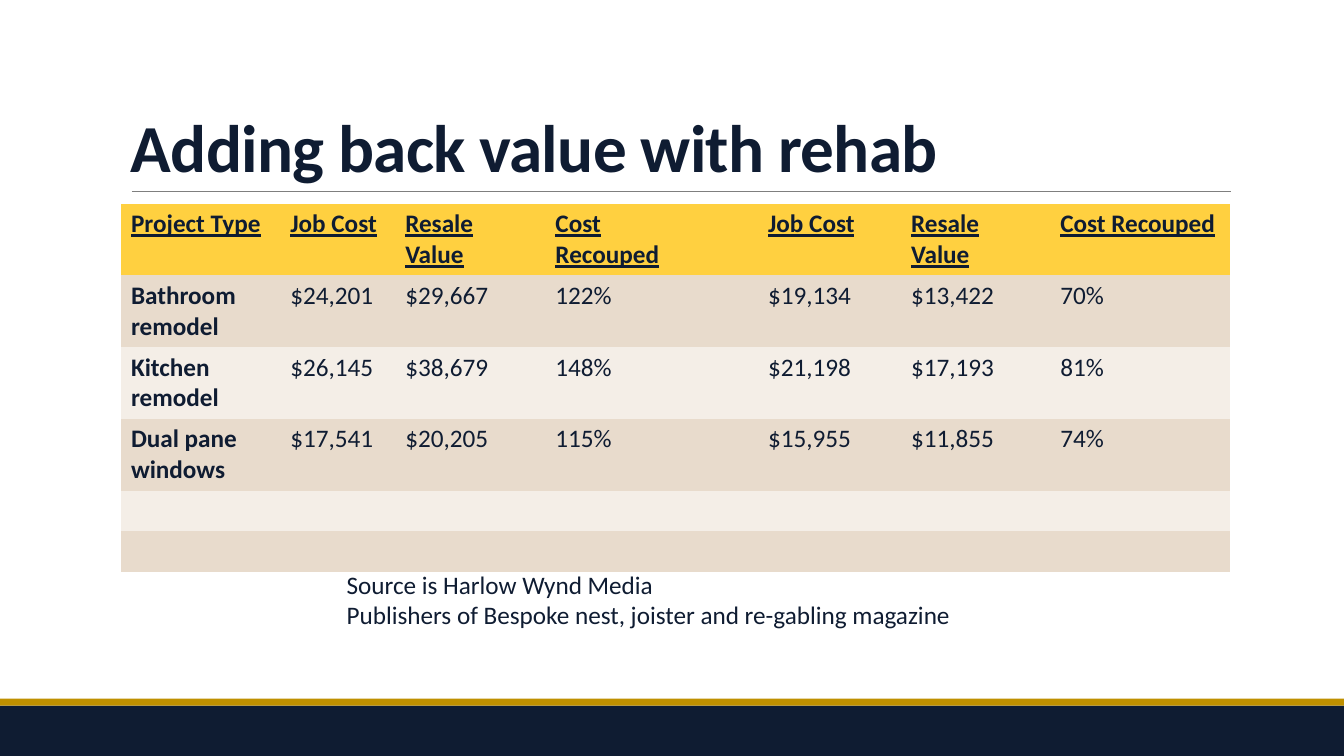
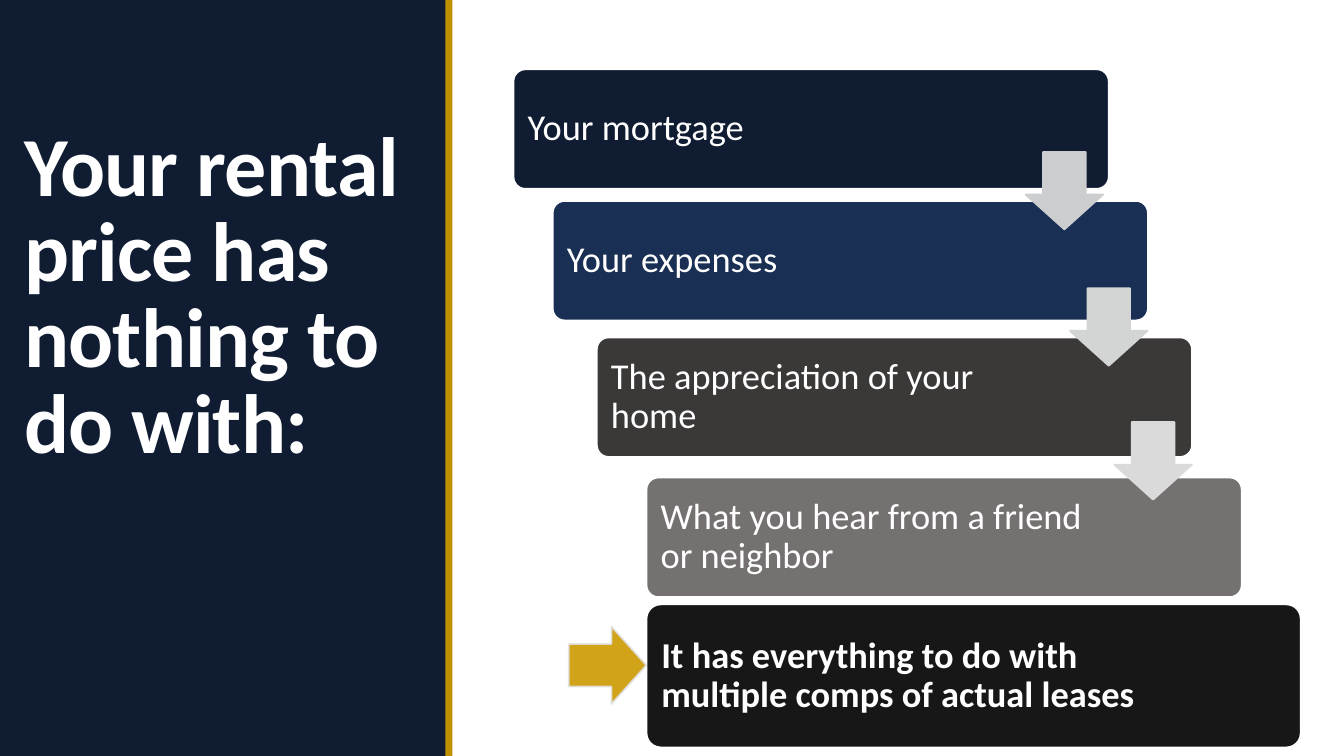
"""Build two slides on rehab value and rental pricing."""
from dataclasses import dataclass

from lxml import etree
from pptx import Presentation
from pptx.dml.color import RGBColor
from pptx.enum import shapes, text
from pptx.oxml.ns import qn
from pptx.util import Pt


@dataclass(frozen=True)
class Theme:
    """Colours, type sizes and measures that the slides share."""

    font: str = "Calibri"
    navy: str = "0F1C32"
    gold: str = "BF9000"
    white: str = "FFFFFF"
    rule: str = "7F7F7F"
    header: str = "FFD040"
    bands: tuple = ("E8DBCC", "F4EEE7")
    arrow: str = "CC9900"
    arrow_edge: str = "E1E1E1"
    title: int = 48
    side_title: int = 60
    body: int = 18
    step: int = 26
    width: int = 960
    height: int = 540
    strip: int = 5


T = Theme()

HEADERS = ["Project Type", "Job Cost", "Resale Value", "Cost Recouped", "",
           "Job Cost", "Resale Value", "Cost Recouped"]
PROJECTS = [
    ["Bathroom remodel", "$24,201", "$29,667", "122%", "", "$19,134", "$13,422", "70%"],
    ["Kitchen remodel", "$26,145", "$38,679", "148%", "", "$21,198", "$17,193", "81%"],
    ["Dual pane windows", "$17,541", "$20,205", "115%", "", "$15,955", "$11,855", "74%"],
    [""] * 8,
    [""] * 8,
]
COLUMNS = [113.8, 82.1, 107.3, 119.5, 32.4, 102.2, 106.5, 128.2]
SOURCE = ["Source is Harlow Wynd Media",
          "Publishers of Bespoke nest, joister and re-gabling magazine"]

STEP_SIZE = (425.2, 85.4)
STEPS = [
    ("Your mortgage", (0, 0), "0F1C32"),
    ("Your expenses", (28, 94), "192F54"),
    ("The appreciation of your home", (59.5, 191.5), "3B3838"),
    ("What you hear from a friend or neighbor", (95, 291.6), "767171"),
]
CONCLUSION = ("It has everything to do with multiple comps of actual leases",
              (95, 382.2, 467.3, 102.2), "181717")
ARROW_SIZE = 55.4
ARROWS = [((365.8, 59), "CCCDCE"), ((397.5, 156.4), "D3D4D4"), ((429.2, 252), "DADADA")]
POINTER = (39.5, 398)


def rgb(value):
    """Turn a hex string into a colour."""
    return RGBColor.from_string(value)


def add_run(p, words, size, color, bold=False, underline=False, spacing=None):
    """Add one formatted run to a paragraph."""
    r = p.add_run()
    r.text = words
    f = r.font
    f.name, f.size, f.bold, f.underline = T.font, Pt(size), bold, underline
    f.color.rgb = rgb(color)
    if spacing is not None:
        r._r.get_or_add_rPr().set("spc", str(round(spacing * 100)))


def add_box(s, kind, box, fill, line=None, alpha=None):
    """Draw a preset shape with a plain fill and an optional outline."""
    sp = s.shapes.add_shape(kind, *map(Pt, box))
    sp.shadow.inherit = False
    sp.fill.solid()
    sp.fill.fore_color.rgb = rgb(fill)
    if line:
        sp.line.color.rgb = rgb(line)
        sp.line.width = Pt(1.25)
    else:
        sp.line.fill.background()
    if alpha:
        for color in sp._element.spPr.iter(qn("a:srgbClr")):
            etree.SubElement(color, qn("a:alpha")).set("val", str(alpha * 1000))
    return sp


def add_band(s, panel, strip):
    """Draw a navy panel edged with a gold strip."""
    for box, color in ((panel, T.navy), (strip, T.gold)):
        add_box(s, shapes.MSO_SHAPE.RECTANGLE, box, color)


def add_textbox(s, box, anchor):
    """Add a wrapping text box and return its text frame."""
    tf = s.shapes.add_textbox(*map(Pt, box)).text_frame
    tf.word_wrap = True
    tf.vertical_anchor = anchor
    return tf


def add_title(s, box, words, size, color, anchor):
    """Place a bold, tightly set title."""
    p = add_textbox(s, box, anchor).paragraphs[0]
    p.line_spacing = 0.85
    add_run(p, words, size, color, bold=True, spacing=-0.5)


def add_rule(s, x, y, width):
    """Draw the thin rule under a title."""
    c = s.shapes.add_connector(shapes.MSO_CONNECTOR.STRAIGHT,
                               Pt(x), Pt(y), Pt(x + width), Pt(y))
    c.line.color.rgb = rgb(T.rule)
    c.line.width = Pt(0.5)
    etree.SubElement(c._element.spPr, qn("a:effectLst"))


def add_project_table(s, x, y):
    """Place the table of project costs and values."""
    rows = [HEADERS] + PROJECTS
    heights = [51.2 if any(row) else 29.2 for row in rows]
    frame = s.shapes.add_table(len(rows), len(COLUMNS), Pt(x), Pt(y),
                               Pt(sum(COLUMNS)), Pt(sum(heights)))
    tbl = frame.table
    tbl.first_row = tbl.horz_banding = False
    style = tbl._tbl.tblPr.find(qn("a:tableStyleId"))
    style.text = "{2D5ABB26-0587-4C30-8999-92F81FD0307C}"
    for column, width in zip(tbl.columns, COLUMNS):
        column.width = Pt(width)
    for i, row in enumerate(rows):
        tbl.rows[i].height = Pt(heights[i])
        for j, words in enumerate(row):
            cell = tbl.cell(i, j)
            cell.fill.solid()
            cell.fill.fore_color.rgb = rgb(T.bands[(i - 1) % 2] if i else T.header)
            if words:
                add_run(cell.text_frame.paragraphs[0], words, T.body, T.navy,
                        bold=i == 0 or j == 0, underline=i == 0)


def add_source(s, box):
    """Place the two source lines."""
    tf = add_textbox(s, box, text.MSO_ANCHOR.TOP)
    for i, words in enumerate(SOURCE):
        p = tf.add_paragraph() if i else tf.paragraphs[0]
        add_run(p, words, T.body, T.navy)


def add_step(s, box, words, fill, bold=False):
    """Draw one rounded step with its text."""
    sp = add_box(s, shapes.MSO_SHAPE.ROUNDED_RECTANGLE, box, fill, T.white)
    sp.adjustments[0] = 0.1
    tf = sp.text_frame
    tf.word_wrap = True
    tf.vertical_anchor = text.MSO_ANCHOR.MIDDLE
    tf.margin_left = tf.margin_top = tf.margin_bottom = Pt(7.6)
    tf.margin_right = Pt(box[2] * 0.223)
    p = tf.paragraphs[0]
    p.alignment = text.PP_ALIGN.LEFT
    p.line_spacing = 0.9
    add_run(p, words, T.step, T.white, bold=bold)


def add_arrow(s, kind, x, y, fill, line, alpha=None):
    """Draw one block arrow."""
    sp = add_box(s, kind, (x, y, ARROW_SIZE, ARROW_SIZE), fill, line, alpha)
    sp.adjustments[0], sp.adjustments[1] = 0.55, 0.45


def add_staircase(s, x, y):
    """Draw the descending steps, the conclusion and their arrows."""
    for words, (dx, dy), fill in STEPS:
        add_step(s, (x + dx, y + dy, *STEP_SIZE), words, fill)
    words, (dx, dy, width, height), fill = CONCLUSION
    add_step(s, (x + dx, y + dy, width, height), words, fill, bold=True)
    for (dx, dy), color in ARROWS:
        add_arrow(s, shapes.MSO_SHAPE.DOWN_ARROW, x + dx, y + dy, color, color)
    dx, dy = POINTER
    add_arrow(s, shapes.MSO_SHAPE.RIGHT_ARROW, x + dx, y + dy,
              T.arrow, T.arrow_edge, alpha=90)


def build_table_slide(s):
    """Build the slide with the project table."""
    add_band(s, (0, 504, T.width, 36), (0, 499, T.width, T.strip))
    add_rule(s, 94.3, 136.7, 784.8)
    add_title(s, (86.4, 22.3, 792, 114.5), "Adding back value with rehab",
              T.title, T.navy, text.MSO_ANCHOR.BOTTOM)
    add_project_table(s, 86.4, 145.6)
    add_source(s, (240.5, 403, 479, 51))


def build_steps_slide(s):
    """Build the slide with the side title and the steps."""
    add_band(s, (0, 0, 319, T.height), (318.2, 0, T.strip, T.height))
    add_title(s, (10.1, 70.6, 298, 285.8), "Your rental price has nothing to do with:",
              T.side_title, T.white, text.MSO_ANCHOR.MIDDLE)
    add_staircase(s, 366.8, 49.5)


def main():
    """Build and save the presentation."""
    prs = Presentation()
    prs.slide_width, prs.slide_height = Pt(T.width), Pt(T.height)
    for build in (build_table_slide, build_steps_slide):
        build(prs.slides.add_slide(prs.slide_layouts[6]))
    prs.save("out.pptx")


if __name__ == "__main__":
    main()
